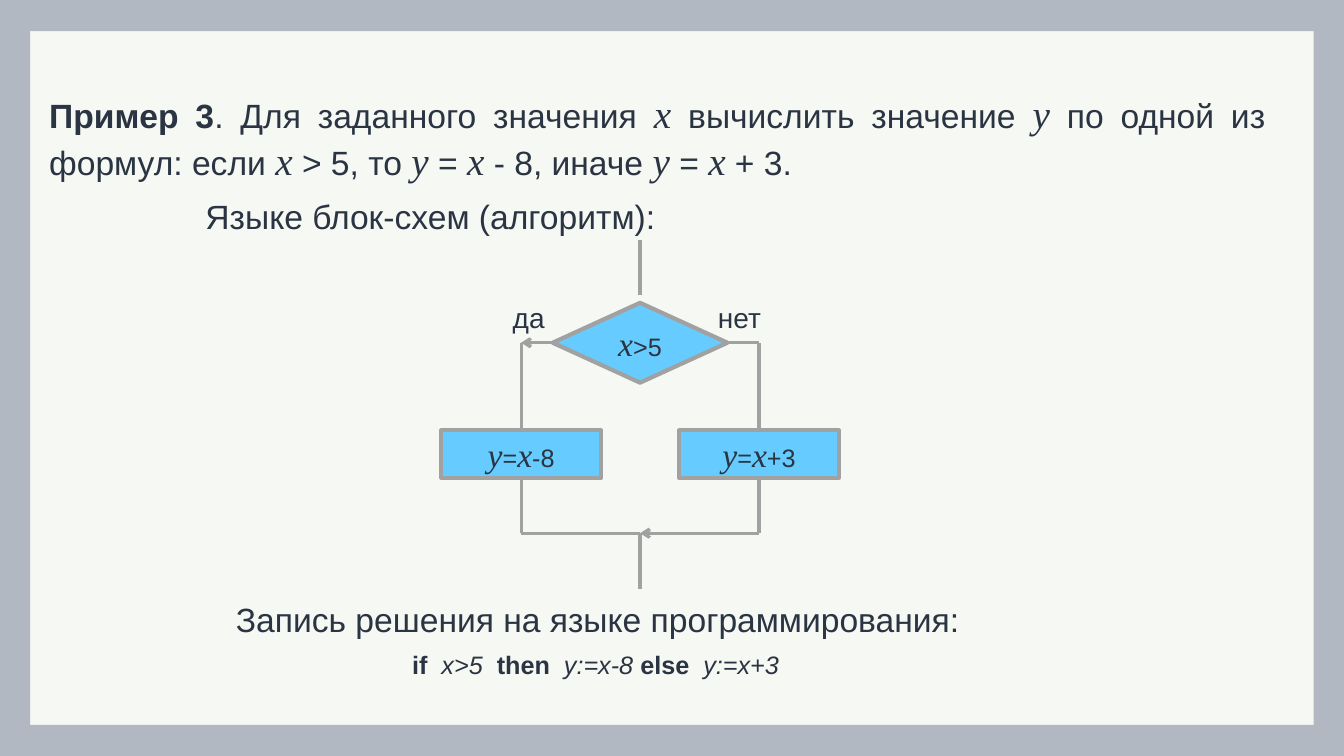
from itertools import groupby

from lxml import etree
from pptx import Presentation
from pptx import util as u
from pptx.dml.color import RGBColor
from pptx.enum import shapes, text
from pptx.oxml import ns

COLUMNS, ROWS = 160, 90
LEFT, CENTER, JUSTIFY = text.PP_ALIGN.LEFT, text.PP_ALIGN.CENTER, text.PP_ALIGN.JUSTIFY
RECTANGLE = shapes.MSO_SHAPE.RECTANGLE
DECISION = shapes.MSO_SHAPE.FLOWCHART_DECISION


def color(value):
    return RGBColor.from_string(value)


def formula(wording, plain, variable):
    parts = groupby(wording, key=lambda letter: letter in "xy")
    return [("".join(letters), {"size": variable, "font": "Times New Roman", "italic": True}
             if is_variable else {"size": plain}) for is_variable, letters in parts]


class Sheet:
    """Draws styled elements on one slide, placed by grid columns and rows."""

    ink, paper, frame = "2A3442", "F6F8F3", "B2B8C2"
    block, stroke = "66CCFF", "A1A1A1"

    def __init__(self, deck):
        self.column = deck.slide_width / COLUMNS
        self.row = deck.slide_height / ROWS
        self.page = deck.slides.add_slide(deck.slide_layouts[6])
        fill = self.page.background.fill
        fill.solid()
        fill.fore_color.rgb = color(self.paper)

    def place(self, *lengths):
        steps = (self.column, self.row) * 2
        return [u.Emu(round(length * step)) for length, step in zip(lengths, steps)]

    def add_runs(self, box, runs, align, wrap):
        box.text_frame.word_wrap = wrap
        para = box.text_frame.paragraphs[0]
        para.alignment = align
        for wording, style in runs:
            span = para.add_run()
            span.text = wording
            span.font.name = style.get("font", "Arial")
            span.font.size = u.Pt(style["size"])
            span.font.bold = style.get("bold", False)
            span.font.italic = style.get("italic", False)
            span.font.color.rgb = color(self.ink)
            if "spread" in style:
                span.font._element.set("spc", str(style["spread"]))

    def label(self, area, runs, align=CENTER, wrap=True):
        box = self.page.shapes.add_textbox(*self.place(*area))
        self.add_runs(box, runs, align, wrap)

    def shape(self, kind, area, fill):
        box = self.page.shapes.add_shape(kind, *self.place(*area))
        box.shadow.inherit = False
        box.fill.solid()
        box.fill.fore_color.rgb = color(fill)
        box.line.fill.background()
        return box

    def node(self, kind, area, wording):
        box = self.shape(kind, area, self.block)
        box.line.color.rgb = color(self.stroke)
        box.line.width = u.Pt(3)
        box.text_frame.vertical_anchor = text.MSO_ANCHOR.MIDDLE
        self.add_runs(box, formula(wording, 18, 24), CENTER, False)

    def line(self, start, end, arrow=False):
        link = self.page.shapes.add_connector(
            shapes.MSO_CONNECTOR.STRAIGHT, *self.place(*start, *end))
        link.line.color.rgb = color(self.stroke)
        link.line.width = u.Pt(2.25)
        if arrow:
            etree.SubElement(link.line._get_or_add_ln(), ns.qn("a:tailEnd"), type="arrow")
        etree.SubElement(link._element.spPr, ns.qn("a:effectLst"))


def draw_frame(sheet):
    edge, side = 3.72, 3.6
    for area in ((0, 0, COLUMNS, edge), (0, ROWS - edge, COLUMNS, edge),
                 (0, 0, side, ROWS), (COLUMNS - side, 0, side, ROWS)):
        sheet.shape(RECTANGLE, area, sheet.frame)


def draw_flowchart(sheet):
    axis, branch = 76.2, 14.16
    yes, no = axis - branch, axis + branch
    diamond_width, diamond_height = 20.8, 9.5
    block_width, block_height = 19, 5.64
    entry, stem, fork, block_top, join = 28.56, 6.6, 40.8, 51.24, 63.48
    block_bottom = block_top + block_height
    half = diamond_width / 2

    sheet.line((axis, entry), (axis, entry + stem))
    sheet.node(DECISION, (axis - half, fork - diamond_height / 2,
                          diamond_width, diamond_height), "x>5")
    for middle, wording in ((yes, "y=x-8"), (no, "y=x+3")):
        sheet.node(RECTANGLE, (middle - block_width / 2, block_top,
                               block_width, block_height), wording)
        sheet.line((middle, fork), (middle, block_top))
        sheet.line((middle, block_bottom), (middle, join))
    sheet.line((axis, join), (axis, join + stem))
    sheet.line((axis + half, fork), (no, fork))
    sheet.line((axis - half, fork), (yes, fork), arrow=True)
    sheet.line((axis, join), (yes, join))
    sheet.line((no, join), (axis, join), arrow=True)
    for wording, left, width in (("да", 59.16, 7.56), ("нет", 82.8, 10.44)):
        sheet.label((left, 35.16, width, 5.16), [(wording, {"size": 20})])


def draw_texts(sheet):
    task = (". Для заданного значения x вычислить значение y по одной из формул: "
            "если x > 5, то y = x - 8, иначе y = x + 3.")
    title = ("Пример 3", {"size": 24, "bold": True})
    sheet.label((4.68, 10.08, 147.12, 12.48), [title] + formula(task, 24, 28), JUSTIFY)
    for wording, left, top in (("Языке блок-схем (алгоритм):", -1.2, 22.68),
                               ("Запись решения на языке программирования:", 18.72, 70.68)):
        sheet.label((left, top, 104.88, 6), [(wording, {"size": 24})])

    keyword, code = {"size": 18, "bold": True}, {"size": 18, "italic": True}
    gap = (" ", {"size": 18, "spread": 500})
    sheet.label((47.88, 76.68, 46.56, 4.8),
                [("if", keyword), gap, ("x>5", code), gap, ("then", keyword), gap,
                 ("y:=x-8 ", code), ("else", keyword), gap, ("y:=x+3", code)],
                LEFT, wrap=False)


def main():
    deck = Presentation()
    deck.slide_width, deck.slide_height = u.Inches(13.33), u.Inches(7.5)
    sheet = Sheet(deck)
    draw_frame(sheet)
    draw_texts(sheet)
    draw_flowchart(sheet)
    deck.save("out.pptx")


if __name__ == "__main__":
    main()
